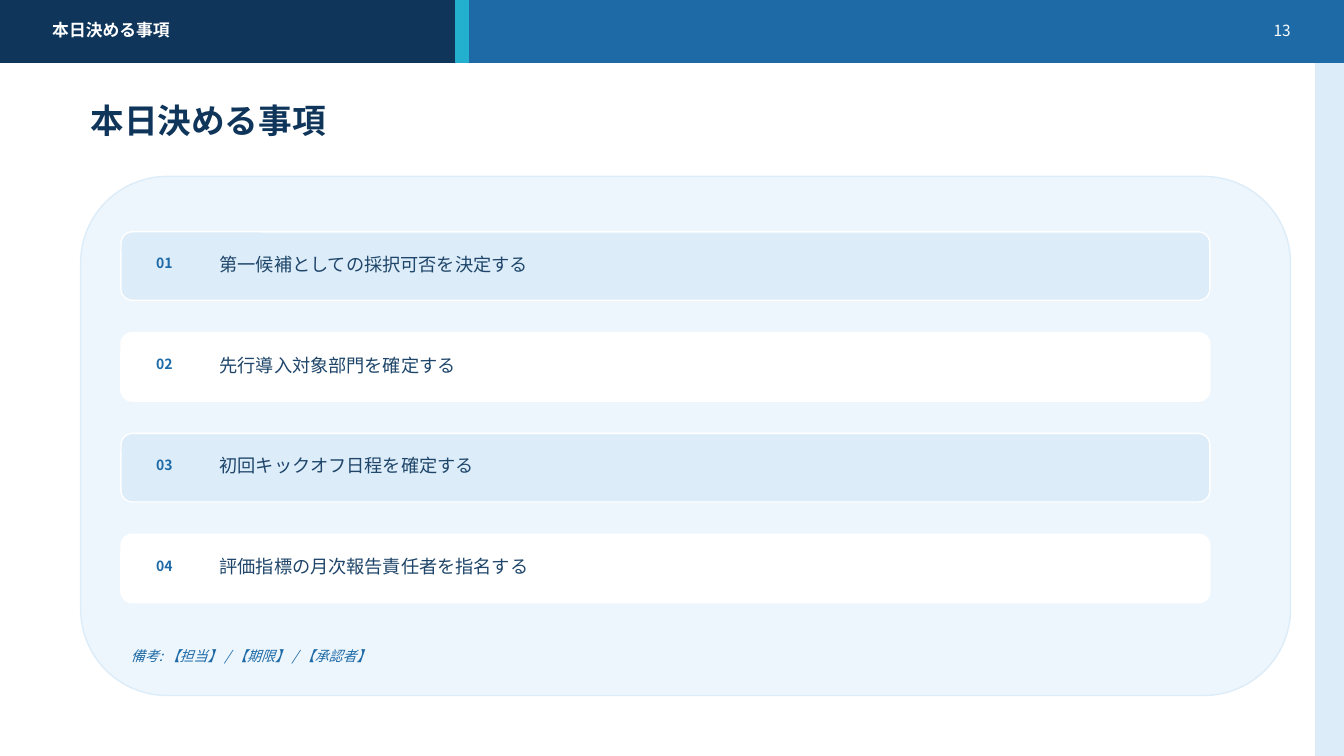
from lxml.etree import SubElement
from pptx import Presentation
from pptx.dml.color import RGBColor
from pptx.enum.shapes import MSO_SHAPE
from pptx.enum.text import MSO_ANCHOR, PP_ALIGN
from pptx.oxml.ns import qn
from pptx.util import Pt

TITLE = "本日決める事項"
PAGE = "13"
ITEMS = [
    "第一候補としての採択可否を決定する",
    "先行導入対象部門を確定する",
    "初回キックオフ日程を確定する",
    "評価指標の月次報告責任者を指名する",
]
NOTE = "備考: 【担当】 / 【期限】 / 【承認者】"

FACE = "Noto Sans CJK JP"
NAVY = RGBColor(0x0F, 0x35, 0x5A)
BLUE = RGBColor(0x1E, 0x6A, 0xA7)
CYAN = RGBColor(0x23, 0xB0, 0xCF)
INK = RGBColor(0x1F, 0x46, 0x6A)
SKY = RGBColor(0xDC, 0xEC, 0xF8)
PALE = RGBColor(0xED, 0xF6, 0xFD)
WHITE = RGBColor(0xFF, 0xFF, 0xFF)

WIDTH, HEIGHT = 959.76, 540
BAR = 44.64
ROW_TOP, ROW_STEP = 165.6, 72


def add_box(slide, area, fill, line=None, kind=MSO_SHAPE.RECTANGLE):
    box = slide.shapes.add_shape(kind, *map(Pt, area))
    box.shadow.inherit = False
    box.fill.solid()
    box.fill.fore_color.rgb = fill
    box.line.color.rgb = line or fill
    box.line.width = Pt(1)


def add_text(slide, area, text, size, color, bold=False, italic=False,
             align=PP_ALIGN.LEFT):
    frame = slide.shapes.add_textbox(*map(Pt, area)).text_frame
    frame.word_wrap = True
    frame.vertical_anchor = MSO_ANCHOR.MIDDLE
    para = frame.paragraphs[0]
    para.text = text
    para.alignment = align
    font = para.font
    font.name = FACE
    font.size = Pt(size)
    font.bold = bold
    font.italic = italic
    font.color.rgb = color
    SubElement(para._p.pPr.defRPr, qn("a:ea"), typeface=FACE)


def add_frame(slide):
    """Draw the side strip, the header bar and the slide title."""
    add_box(slide, (939.6, 39.6, 20.16, 500.4), SKY)
    add_box(slide, (0, 0, WIDTH, BAR), BLUE)
    add_box(slide, (0, 0, 331.2, BAR), NAVY)
    add_box(slide, (325.44, 0, 8.64, BAR), CYAN)
    add_text(slide, (30.24, 12.24, 633.6, 18.72), TITLE, 12, WHITE, bold=True)
    add_text(slide, (874.8, 12.24, 54, 18.72), PAGE, 11, WHITE,
             align=PP_ALIGN.RIGHT)
    add_text(slide, (57.6, 68.4, 820.8, 34.56), TITLE, 24, NAVY, bold=True)


def add_items(slide):
    """Draw the panel, its numbered rows and the note below them."""
    rounded = MSO_SHAPE.ROUNDED_RECTANGLE
    add_box(slide, (57.6, 126, 864, 370.8), PALE, SKY, rounded)
    for index, item in enumerate(ITEMS):
        top = ROW_TOP + index * ROW_STEP
        fill = WHITE if index % 2 else SKY
        add_box(slide, (86.4, top, 777.6, 48.96), fill, WHITE, rounded)
        add_text(slide, (104.4, top + 15.12, 31.68, 14.4), f"{index + 1:02}",
                 10, BLUE, bold=True)
        add_text(slide, (149.76, top + 14.4, 691.2, 17.28), item, 13, INK)
    add_text(slide, (86.4, 460.8, 489.6, 15.84), NOTE, 10, BLUE, italic=True)


def main():
    deck = Presentation()
    deck.slide_width, deck.slide_height = Pt(WIDTH), Pt(HEIGHT)
    slide = deck.slides.add_slide(deck.slide_layouts[6])
    add_frame(slide)
    add_items(slide)
    deck.save("out.pptx")


if __name__ == "__main__":
    main()
